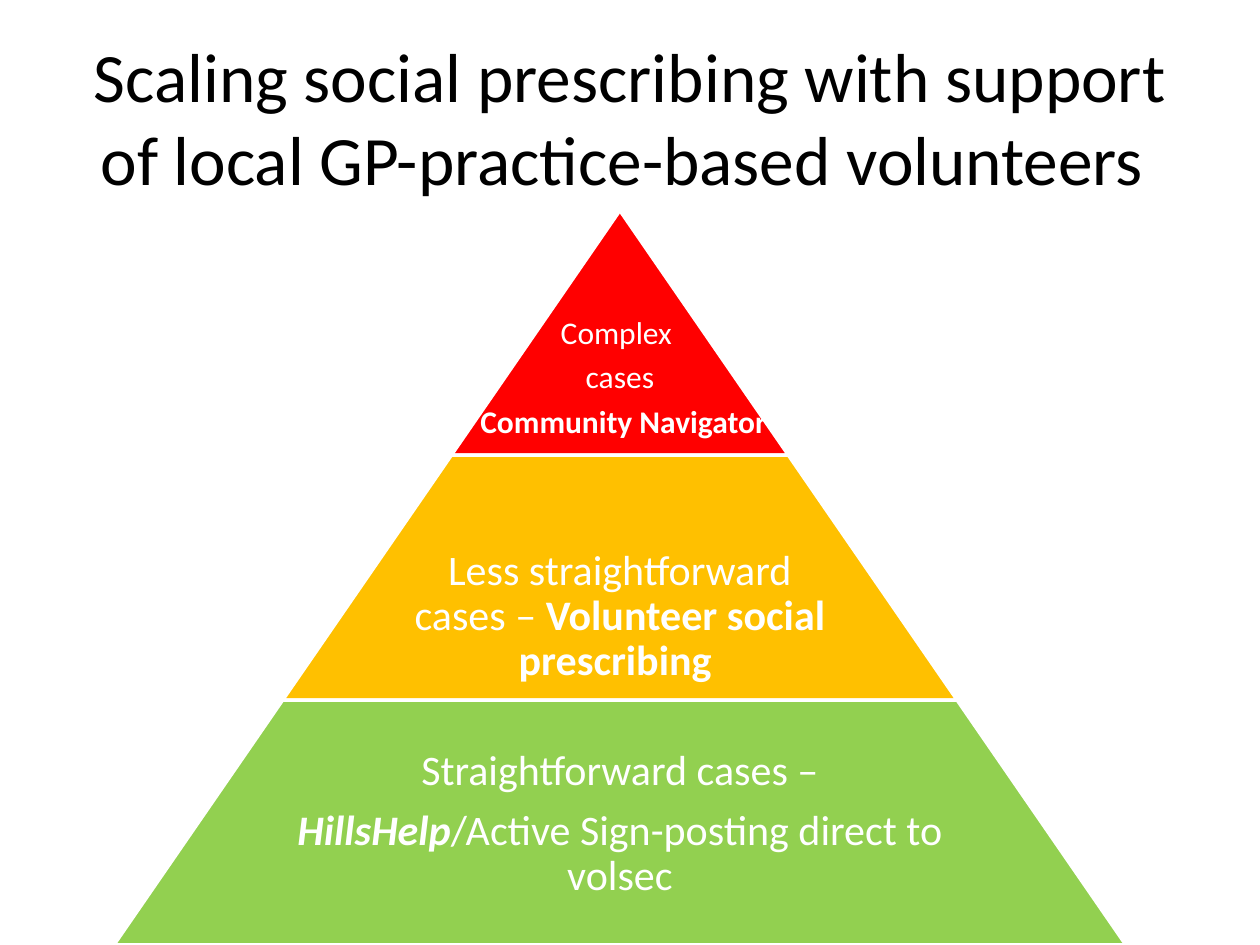
from pptx import Presentation
from pptx.dml.color import RGBColor as RGB
from pptx.enum.shapes import MSO_SHAPE as Shape
from pptx.enum.text import MSO_ANCHOR as Anchor, PP_ALIGN as Align
from pptx.util import Inches as In, Pt

RED = RGB(0xFF, 0x00, 0x00)
AMBER = RGB(0xFF, 0xC0, 0x00)
GREEN = RGB(0x92, 0xD0, 0x50)
WHITE = RGB(0xFF, 0xFF, 0xFF)
BLACK = RGB(0x00, 0x00, 0x00)
FONT = "Calibri"

# Pyramid grid: equal rows, each one step wider than the row above
TOP, ROW, STEP, MID = 1.67, 1.943, 2.677, 4.92
SLOPE = 0.689

TITLE = ("Scaling social prescribing with support "
         "of local GP-practice-based volunteers ")

# Colour, text size, text share of the width, bottom inset, paragraphs of runs
TIERS = [
    (RED, 18, 1, 0.12, [
        [("Complex ", "")],
        [("cases", "")],
        [(" Community Navigator", "b")]]),
    (AMBER, 24, 0.65, 0.12, [
        [("Less straightforward cases – ", ""),
         ("Volunteer social prescribing ", "b")]]),
    (GREEN, 24, 0.65, 0.36, [
        [("Straightforward cases –", "")],
        [("HillsHelp", "bi"),
         ("/Active Sign-posting direct to volsec", "")]]),
]


def add_run(para, text, size, color, style=""):
    run = para.add_run()
    run.text = text
    font = run.font
    font.name, font.size = FONT, Pt(size)
    font.color.rgb = color
    font.bold, font.italic = "b" in style, "i" in style


def set_title(slide):
    title = slide.shapes.title
    title.left, title.top = In(0.5), In(0.3)
    title.width, title.height = In(9), In(1.25)
    frame = title.text_frame
    frame.word_wrap = True
    frame.vertical_anchor = Anchor.MIDDLE
    para = frame.paragraphs[0]
    para.alignment = Align.CENTER
    add_run(para, TITLE, 39.6, BLACK)


def add_band(slide, row, color):
    wide = STEP * (row + 1)
    band = slide.shapes.add_shape(
        Shape.ISOSCELES_TRIANGLE if row < 0 else Shape.TRAPEZOID,
        In(MID - wide / 2), In(TOP + ROW * row), In(wide), In(ROW))
    band.adjustments[0] = SLOPE
    band.shadow.inherit = False
    band.fill.solid()
    band.fill.fore_color.rgb = color
    band.line.color.rgb = WHITE
    band.line.width = Pt(2)


def add_label(slide, row, size, share, inset, paras):
    wide = STEP * (row + 1) * share
    box = slide.shapes.add_textbox(
        In(MID - wide / 2), In(TOP + ROW * row), In(wide), In(ROW))
    frame = box.text_frame
    frame.word_wrap = True
    frame.vertical_anchor = Anchor.BOTTOM
    frame.margin_left = frame.margin_right = frame.margin_top = In(0.03)
    frame.margin_bottom = In(inset)
    for i, runs in enumerate(paras):
        para = frame.add_paragraph() if i else frame.paragraphs[0]
        para.alignment = Align.CENTER
        para.line_spacing = 0.9
        if i:
            para.space_before = Pt(size * 0.33)
        for text, style in runs:
            add_run(para, text, size, WHITE, style)


def main():
    deck = Presentation()
    deck.slide_width, deck.slide_height = In(10), In(7.5)
    slide = deck.slides.add_slide(deck.slide_layouts[5])
    set_title(slide)

    # Pyramid, from the tip down
    for row, (color, size, share, inset, paras) in enumerate(TIERS):
        add_band(slide, row, color)
        add_label(slide, row, size, share, inset, paras)

    deck.save("out.pptx")


if __name__ == "__main__":
    main()
